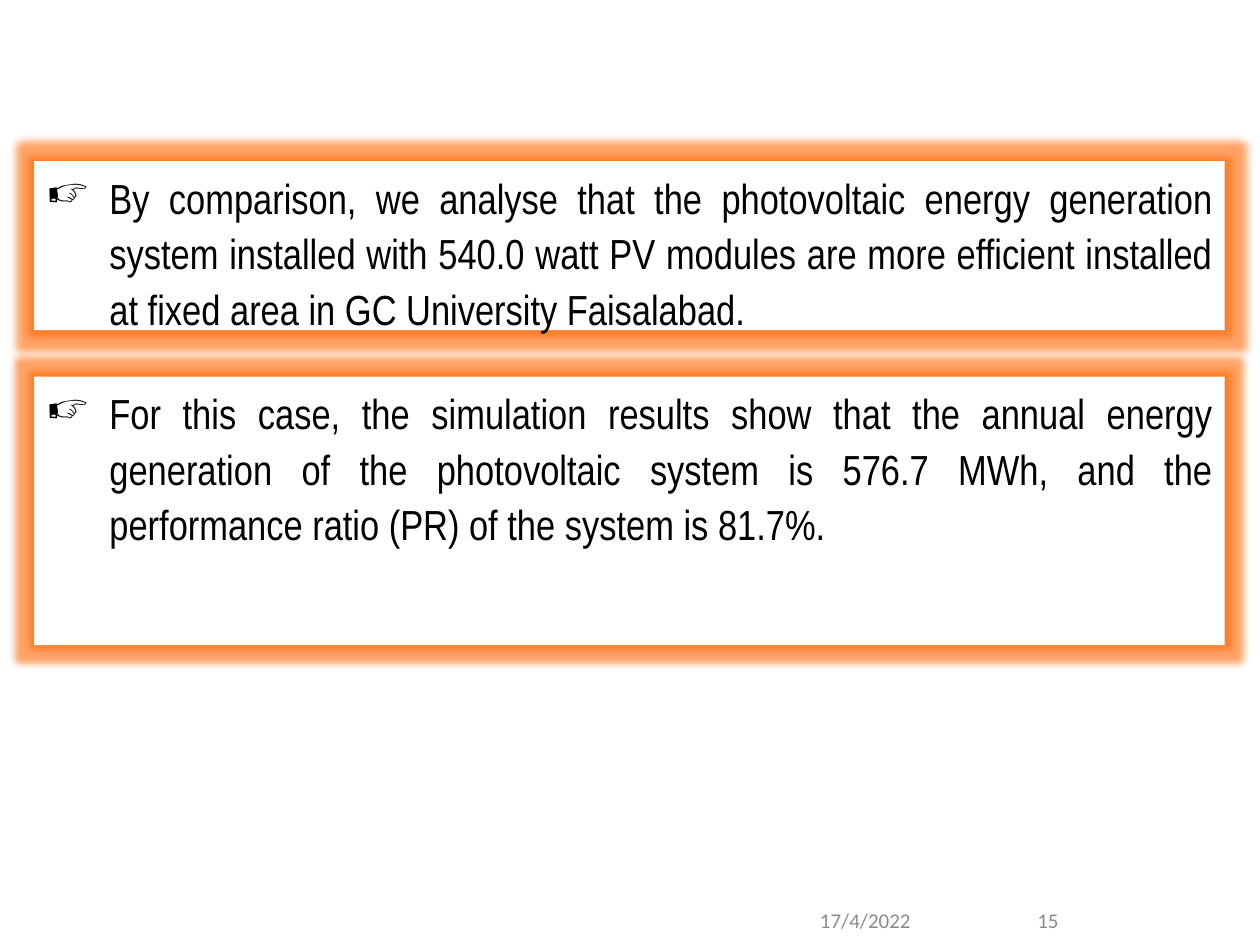
"""Build the conclusions slide: two glowing panels above a date and page number."""
from dataclasses import dataclass

from lxml.etree import SubElement
from pptx import Presentation
from pptx.dml.color import RGBColor as Rgb
from pptx.enum.shapes import MSO_SHAPE as Shape
from pptx.enum.text import MSO_ANCHOR as Anchor, PP_ALIGN as Align
from pptx.oxml.ns import qn
from pptx.util import Emu, Inches, Pt

WIDE, HIGH = Inches(10), Inches(7.5)


@dataclass(frozen=True)
class Theme:
    paper: str = "FFFFFF"
    ink: str = "000000"
    mute: str = "8C8C8C"
    glow: str = "FF6600"
    body: str = "Arial Narrow"
    foot: str = "Calibri"
    big: int = 24
    small: int = 12


@dataclass(frozen=True)
class Area:
    """Hold a box as shares of the slide's width and height."""
    x: float
    y: float
    w: float
    h: float

    def place(self) -> tuple[Emu, ...]:
        sides = (WIDE, HIGH, WIDE, HIGH)
        shares = (self.x, self.y, self.w, self.h)
        return tuple(Emu(round(a * b)) for a, b in zip(sides, shares))


@dataclass(frozen=True)
class Item:
    text: str
    area: Area
    align: Align


LOOK = Theme()
LEFT, SPAN = 0.027, 0.945
PANELS = (
    Item("By comparison, we analyse that the photovoltaic energy generation "
         "system installed with 540.0 watt PV modules are more efficient "
         "installed at fixed area in GC University Faisalabad.",
         Area(LEFT, 1.28 / 7.5, SPAN, 1.34 / 7.5), Align.JUSTIFY),
    Item("For this case, the simulation results show that the annual energy "
         "generation of the photovoltaic system is 576.7 MWh, and the "
         "performance ratio (PR) of the system is 81.7%.",
         Area(LEFT, 2.99 / 7.5, SPAN, 2.13 / 7.5), Align.JUSTIFY),
)
FOOTER = (
    Item("17/4/2022", Area(0.641, 7.11 / 7.5, 0.14, 0.39 / 7.5), Align.LEFT),
    Item("15", Area(0.789, 7.1 / 7.5, 0.061, 0.4 / 7.5), Align.RIGHT),
)


def style(para, item: Item, face: str, size: int, tint: str) -> None:
    para.text, para.alignment = item.text, item.align
    font = para.font
    font.name, font.size = face, Pt(size)
    font.color.rgb = Rgb.from_string(tint)


def add_glow(box) -> None:
    props = box._element.spPr
    list_ = props.find(qn("a:effectLst"))
    glow = SubElement(list_, qn("a:glow"), rad=str(Pt(8)))
    tint = SubElement(glow, qn("a:srgbClr"), val=LOOK.glow)
    SubElement(tint, qn("a:alpha"), val="60000")


def add_panel(slide, item: Item) -> None:
    box = slide.shapes.add_shape(Shape.RECTANGLE, *item.area.place())
    box.fill.solid()
    box.fill.fore_color.rgb = Rgb.from_string(LOOK.paper)
    box.line.fill.background()
    box.shadow.inherit = False
    add_glow(box)
    frame = box.text_frame
    frame.word_wrap, frame.vertical_anchor = True, Anchor.TOP
    para = frame.paragraphs[0]
    para.line_spacing, para.space_after = 1.1, Pt(12)
    props = para._p.get_or_add_pPr()
    props.set("marL", str(Inches(0.5)))
    props.set("indent", str(-Inches(0.5)))
    SubElement(props, qn("a:buChar"), char="☞")
    style(para, item, LOOK.body, LOOK.big, LOOK.ink)


def add_foot(slide, item: Item) -> None:
    frame = slide.shapes.add_textbox(*item.area.place()).text_frame
    frame.word_wrap, frame.vertical_anchor = True, Anchor.MIDDLE
    style(frame.paragraphs[0], item, LOOK.foot, LOOK.small, LOOK.mute)


def main() -> None:
    deck = Presentation()
    deck.slide_width, deck.slide_height = WIDE, HIGH
    slide = deck.slides.add_slide(deck.slide_layouts[6])
    for item in FOOTER:
        add_foot(slide, item)
    for item in PANELS:
        add_panel(slide, item)
    deck.save("out.pptx")


if __name__ == "__main__":
    main()
